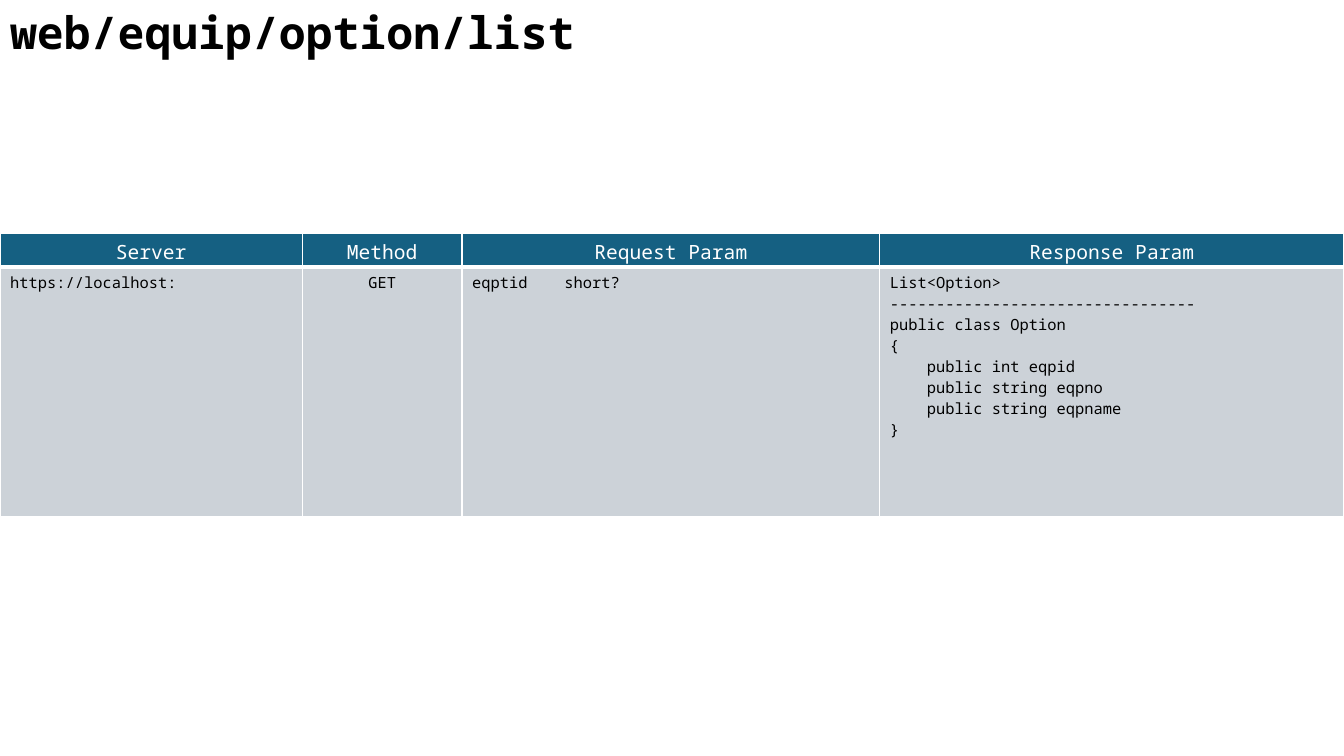
from lxml.etree import SubElement
from pptx import Presentation
from pptx.dml.color import RGBColor
from pptx.enum.text import MSO_ANCHOR, MSO_AUTO_SIZE, PP_ALIGN
from pptx.oxml.ns import qn
from pptx.util import Pt

PX = 9525
FONT = "Noto Sans Mono"
COLUMN_WIDTHS = [288, 152, 398, 442]
ROW_HEIGHTS = [17, 238]
HEADERS = ["Server", "Method", "Request Param", "Response Param"]
RESPONSE = """List<Option>
---------------------------------
public class Option
{
    public int eqpid
    public string eqpno
    public string eqpname
}"""
DETAILS = ["https://localhost:", "GET", "eqptid\tshort?", RESPONSE]


def px(length):
    return length * PX


def rgb(color):
    return RGBColor.from_string(color)


def style_text(frame, size, color, align, bold=False):
    for para in frame.paragraphs:
        para.alignment = align
        for span in para.runs:
            span.font.name = FONT
            span.font.size = Pt(size)
            span.font.bold = bold
            span.font.color.rgb = rgb(color)


def add_tab_stop(para, position):
    tabs = SubElement(para._p.get_or_add_pPr(), qn("a:tabLst"))
    SubElement(tabs, qn("a:tab"), pos=str(px(position)), algn="l")


def set_borders(cell, color, bottom_width):
    """Draw 1 pt borders, with the bottom one in its own width."""
    properties = cell._tc.get_or_add_tcPr()
    widths = {"a:lnL": 1, "a:lnR": 1, "a:lnT": 1, "a:lnB": bottom_width}
    for side, width in widths.items():
        line = SubElement(properties, qn(side), w=str(Pt(width)))
        fill = SubElement(line, qn("a:solidFill"))
        SubElement(fill, qn("a:srgbClr"), val=color)


def fill_cell(cell, text, size, color, fill, align, bottom_width):
    cell.text_frame.text = text
    if "\t" in text:
        add_tab_stop(cell.text_frame.paragraphs[0], 88)
    style_text(cell.text_frame, size, color, align)
    set_borders(cell, "FFFFFF", bottom_width)
    cell.fill.solid()
    cell.fill.fore_color.rgb = rgb(fill)


def set_title(page, text):
    title = page.shapes.title
    title.left, title.top, title.width, title.height = map(px, (0, 0, 907, 61))
    frame = title.text_frame
    frame.text = text
    frame.word_wrap = True
    frame.vertical_anchor = MSO_ANCHOR.TOP
    frame.auto_size = MSO_AUTO_SIZE.SHAPE_TO_FIT_TEXT
    style_text(frame, 32, "000000", PP_ALIGN.LEFT, bold=True)


def add_endpoint_table(page):
    holder = page.shapes.add_table(2, 4, 0, px(222), px(1280), px(271))
    table = holder.table
    for column, width in zip(table.columns, COLUMN_WIDTHS):
        column.width = px(width)
    for row, height in zip(table.rows, ROW_HEIGHTS):
        row.height = px(height)
    holder.height = px(271)
    for index, (header, detail) in enumerate(zip(HEADERS, DETAILS)):
        fill_cell(table.cell(0, index), header, 14, "FFFFFF", "156082",
                  PP_ALIGN.CENTER, 3)
        align = PP_ALIGN.CENTER if header == "Method" else PP_ALIGN.LEFT
        fill_cell(table.cell(1, index), detail, 11, "000000", "CCD2D8",
                  align, 1)


def main():
    deck = Presentation()
    deck.slide_width, deck.slide_height = px(1280), px(720)
    page = deck.slides.add_slide(deck.slide_layouts[5])
    set_title(page, "web/equip/option/list")
    add_endpoint_table(page)
    deck.save("out.pptx")


if __name__ == "__main__":
    main()
